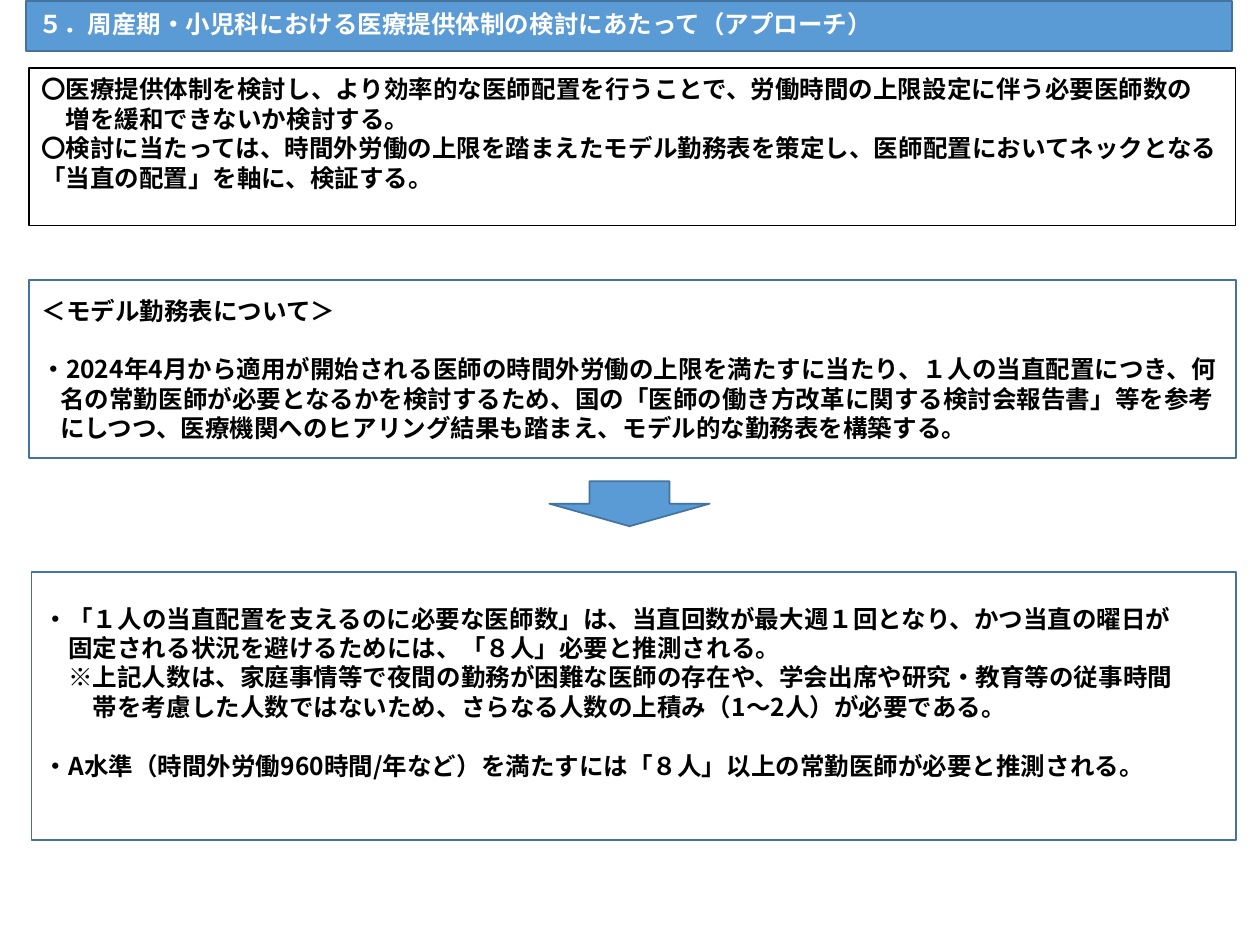
from pptx import Presentation
from pptx.dml.color import RGBColor
from pptx.enum.shapes import MSO_SHAPE as Shape
from pptx.enum.text import MSO_ANCHOR as Anchor, PP_ALIGN as Align
from pptx.oxml.ns import qn
from pptx.util import Pt
from lxml.etree import SubElement

FONT = "Noto Sans CJK JP"
WHITE = RGBColor(0xFF, 0xFF, 0xFF)
BLACK = RGBColor(0, 0, 0)
BLUE = RGBColor(0x5B, 0x9B, 0xD5)
DARK_BLUE = RGBColor(0x43, 0x73, 0x9E)
SIZE = 14
LINE = 16.8
HANGING = 10.8


def add_panel(slide, box, kind=Shape.RECTANGLE, fill=WHITE, line=DARK_BLUE, anchor=Anchor.MIDDLE):
    shape = slide.shapes.add_shape(kind, *(Pt(value) for value in box))
    shape.shadow.inherit = False
    if fill is None:
        shape.fill.background()
    else:
        shape.fill.solid()
        shape.fill.fore_color.rgb = fill
    shape.line.color.rgb = line
    shape.line.width = Pt(1)
    shape.text_frame.word_wrap = True
    shape.text_frame.vertical_anchor = anchor
    return shape


def add_paragraph(frame, text, color=BLACK, align=Align.LEFT, left=0, first=0,
                  before=0, spacing=LINE, tab=None):
    paragraph = frame.paragraphs[0]
    if paragraph.runs:
        paragraph = frame.add_paragraph()
    paragraph.alignment = align
    paragraph.line_spacing = Pt(spacing)
    paragraph.space_before = Pt(before)
    properties = paragraph._p.get_or_add_pPr()
    properties.set("marL", str(Pt(left)))
    properties.set("indent", str(Pt(first)))
    if tab:
        tabs = SubElement(properties, qn("a:tabLst"))
        SubElement(tabs, qn("a:tab"), pos=str(Pt(tab)), algn="l")
    run = paragraph.add_run()
    run.text = text
    run.font.name = FONT
    run.font.size = Pt(SIZE)
    run.font.bold = True
    run.font.color.rgb = color
    SubElement(run.font._element, qn("a:ea"), typeface=FONT)


def add_title(slide, box):
    frame = add_panel(slide, box, fill=BLUE).text_frame
    add_paragraph(frame, "５．周産期・小児科における医療提供体制の検討にあたって（アプローチ）",
                  color=WHITE, spacing=SIZE)


def add_approach(slide, box):
    frame = add_panel(slide, box, fill=None, line=BLACK, anchor=Anchor.TOP).text_frame
    add_paragraph(frame, "〇医療提供体制を検討し、より効率的な医師配置を行うことで、労働時間の上限設定に伴う必要医師数の",
                  align=Align.JUSTIFY)
    add_paragraph(frame, "増を緩和できないか検討する。", align=Align.JUSTIFY, left=SIZE)
    add_paragraph(frame, "〇検討に当たっては、時間外労働の上限を踏まえたモデル勤務表を策定し、医師配置においてネックとなる\t「当直の配置」を軸に、検証する。",
                  align=Align.JUSTIFY, tab=3 * SIZE)


def add_model_schedule(slide, box):
    frame = add_panel(slide, box).text_frame
    add_paragraph(frame, "＜モデル勤務表について＞", left=HANGING, first=-HANGING)
    add_paragraph(frame, "・2024年4月から適用が開始される医師の時間外労働の上限を満たすに当たり、１人の当直配置につき、何名の常勤医師が必要となるかを検討するため、国の「医師の働き方改革に関する検討会報告書」等を参考にしつつ、医療機関へのヒアリング結果も踏まえ、モデル的な勤務表を構築する。",
                  left=HANGING, first=-HANGING, before=LINE)


def add_estimate(slide, box):
    frame = add_panel(slide, box, anchor=Anchor.TOP).text_frame
    frame.margin_top = Pt(18)
    add_paragraph(frame, "・「１人の当直配置を支えるのに必要な医師数」は、当直回数が最大週１回となり、かつ当直の曜日が",
                  align=Align.JUSTIFY)
    add_paragraph(frame, "固定される状況を避けるためには、「８人」必要と推測される。",
                  align=Align.JUSTIFY, left=SIZE)
    add_paragraph(frame, "※上記人数は、家庭事情等で夜間の勤務が困難な医師の存在や、学会出席や研究・教育等の従事時間",
                  left=SIZE)
    add_paragraph(frame, "帯を考慮した人数ではないため、さらなる人数の上積み（1～2人）が必要である。",
                  left=2 * SIZE)
    add_paragraph(frame, "・A水準（時間外労働960時間/年など）を満たすには「８人」以上の常勤医師が必要と推測される。",
                  align=Align.JUSTIFY, before=LINE)


def main():
    presentation = Presentation()
    presentation.slide_width = Pt(720)
    presentation.slide_height = Pt(540)
    slide = presentation.slides.add_slide(presentation.slide_layouts[6])
    add_title(slide, (15, 0.7, 689, 28.3))
    add_approach(slide, (16.4, 38.9, 689.6, 90))
    add_estimate(slide, (18, 326.9, 688.2, 153))
    add_panel(slide, (314, 275, 91.5, 25.7), kind=Shape.DOWN_ARROW, fill=BLUE)
    add_model_schedule(slide, (16.6, 159.9, 689.8, 102))
    presentation.save("out.pptx")


if __name__ == "__main__":
    main()
